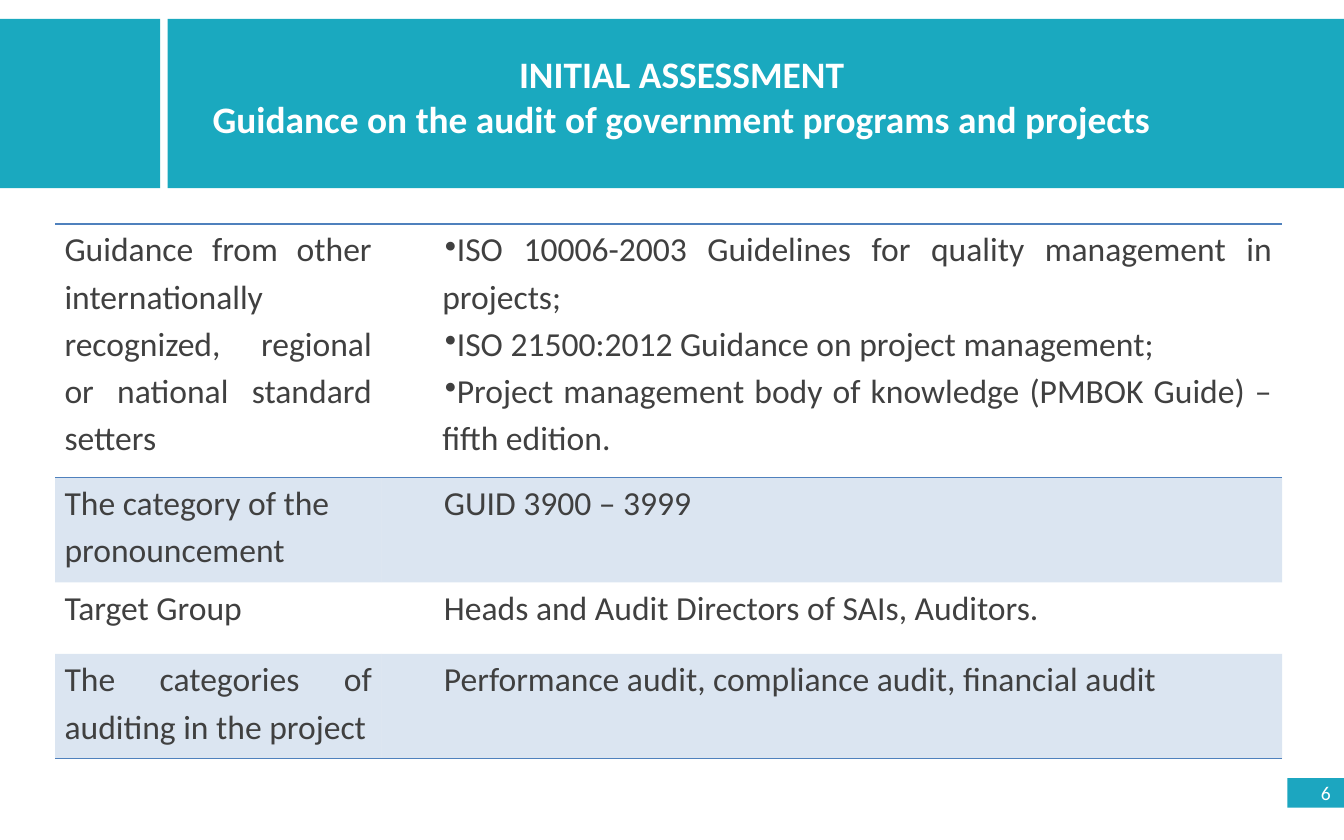
from lxml.etree import SubElement
from pptx import Presentation
from pptx.dml.color import RGBColor
from pptx.enum.shapes import MSO_SHAPE
from pptx.enum.text import MSO_ANCHOR, MSO_AUTO_SIZE, PP_ALIGN
from pptx.oxml.ns import qn
from pptx.util import Cm, Pt

TEAL, PAGE_TEAL, BLUE, WHITE, GREY = "1AA9BF", "1CA6C0", "4F81BD", "FFFFFF", "404040"
LEFT, CENTER, RIGHT, JUSTIFY = PP_ALIGN.LEFT, PP_ALIGN.CENTER, PP_ALIGN.RIGHT, PP_ALIGN.JUSTIFY

ROWS = [
    (4.8, "Guidance from other internationally recognized, regional or national standard setters", JUSTIFY,
     ["ISO 10006-2003 Guidelines for quality management in projects;",
      "ISO 21500:2012 Guidance on project management;",
      "Project management body of knowledge (PMBOK Guide) – fifth edition."], JUSTIFY),
    (1.98, "The category of the pronouncement", LEFT, ["GUID 3900 – 3999"], LEFT),
    (1.35, "Target Group", LEFT, ["Heads and Audit Directors of SAIs, Auditors."], JUSTIFY),
    (1.98, "The categories of auditing in the project", JUSTIFY,
     ["Performance audit, compliance audit, financial audit"], LEFT),
]


def color(hex_text):
    return RGBColor.from_string(hex_text)


class SlideBuilder:
    font = "Calibri"

    def __init__(self, page):
        self.page = page

    def style(self, para, size, hex_text, align, bold=False):
        para.alignment = align
        for span in para.runs:
            span.font.name = self.font
            span.font.size = Pt(size)
            span.font.bold = bold
            span.font.color.rgb = color(hex_text)

    def block(self, left, top, width, height, fill):
        box = self.page.shapes.add_shape(MSO_SHAPE.RECTANGLE, Cm(left), Cm(top), Cm(width), Cm(height))
        box.shadow.inherit = False
        box.fill.solid()
        box.fill.fore_color.rgb = color(fill)
        box.line.fill.background()
        return box

    def page_number(self, number):
        box = self.block(24.33, 14.71, 1.07, 0.56, PAGE_TEAL)
        box.text_frame.text = number
        box.text_frame.vertical_anchor = MSO_ANCHOR.MIDDLE
        self.style(box.text_frame.paragraphs[0], 10.5, WHITE, RIGHT)

    def title(self, left, top, width, height, text):
        box = self.page.shapes.add_textbox(Cm(left), Cm(top), Cm(width), Cm(height))
        frame = box.text_frame
        frame.word_wrap = True
        frame.auto_size = MSO_AUTO_SIZE.SHAPE_TO_FIT_TEXT
        frame.text = text
        for para in frame.paragraphs:
            self.style(para, 20, WHITE, CENTER, bold=True)

    def indent(self, para, margin, first=0.0, bullet=False):
        properties = para._p.get_or_add_pPr()
        properties.set("marL", str(Cm(margin)))
        properties.set("indent", str(Cm(first)))
        if bullet:
            SubElement(properties, qn("a:buChar"), char="•")
            tabs = SubElement(properties, qn("a:tabLst"))
            SubElement(tabs, qn("a:tab"), pos=str(Cm(1.25)), algn="l")

    def finish_cell(self, cell, tinted, ruled_sides):
        properties = cell._tc.get_or_add_tcPr()
        for side in "LRTB":
            line = SubElement(properties, qn(f"a:ln{side}"), w=str(Pt(1)))
            if side in ruled_sides:
                fill = SubElement(line, qn("a:solidFill"))
                SubElement(fill, qn("a:srgbClr"), val=BLUE)
            else:
                SubElement(line, qn("a:noFill"))
        if tinted:
            fill = SubElement(properties, qn("a:solidFill"))
            tint = SubElement(fill, qn("a:srgbClr"), val=BLUE)
            SubElement(tint, qn("a:alpha"), val="20000")
        else:
            cell.fill.background()

    def fill_cell(self, cell, lines, align, margin):
        cell.margin_left = cell.margin_right = Cm(0.18)
        cell.margin_top = cell.margin_bottom = 0
        cell.text_frame.text = "\n".join(lines)
        for para in cell.text_frame.paragraphs:
            if len(lines) > 1:
                self.indent(para, 0.97, 0.05, bullet=True)
            elif margin:
                self.indent(para, margin)
            para.line_spacing = 1.15
            self.style(para, 18, GREY, align)

    def table(self, left, top, widths, rows):
        height = sum(row[0] for row in rows)
        frame = self.page.shapes.add_table(len(rows), len(widths), Cm(left), Cm(top),
                                           Cm(sum(widths)), Cm(height))
        table = frame.table
        table.first_row = table.horz_banding = False
        for column, width in zip(table.columns, widths):
            column.width = Cm(width)
        last = len(rows) - 1
        for index, (height, label, label_align, lines, align) in enumerate(rows):
            table.rows[index].height = Cm(height)
            self.fill_cell(table.cell(index, 0), [label], label_align, 0)
            self.fill_cell(table.cell(index, 1), lines, align, 1)
            sides = ("T" if index in (0, 1) else "") + ("B" if index in (0, last) else "")
            for cell in table.rows[index].cells:
                self.finish_cell(cell, index % 2 == 1, sides)


def main():
    deck = Presentation()
    deck.slide_width, deck.slide_height = Cm(25.4), Cm(15.88)
    builder = SlideBuilder(deck.slides.add_slide(deck.slide_layouts[6]))
    builder.block(3.17, 0.36, 22.23, 3.2, TEAL)
    builder.block(0, 0.36, 3.03, 3.2, TEAL)
    builder.page_number("6")
    builder.table(1.04, 4.23, [6.17, 17.02], ROWS)
    builder.title(3.73, 0.84, 18.31, 1.96,
                  "INITIAL ASSESSMENT\nGuidance on the audit of government programs and projects")
    deck.save("out.pptx")


if __name__ == "__main__":
    main()
